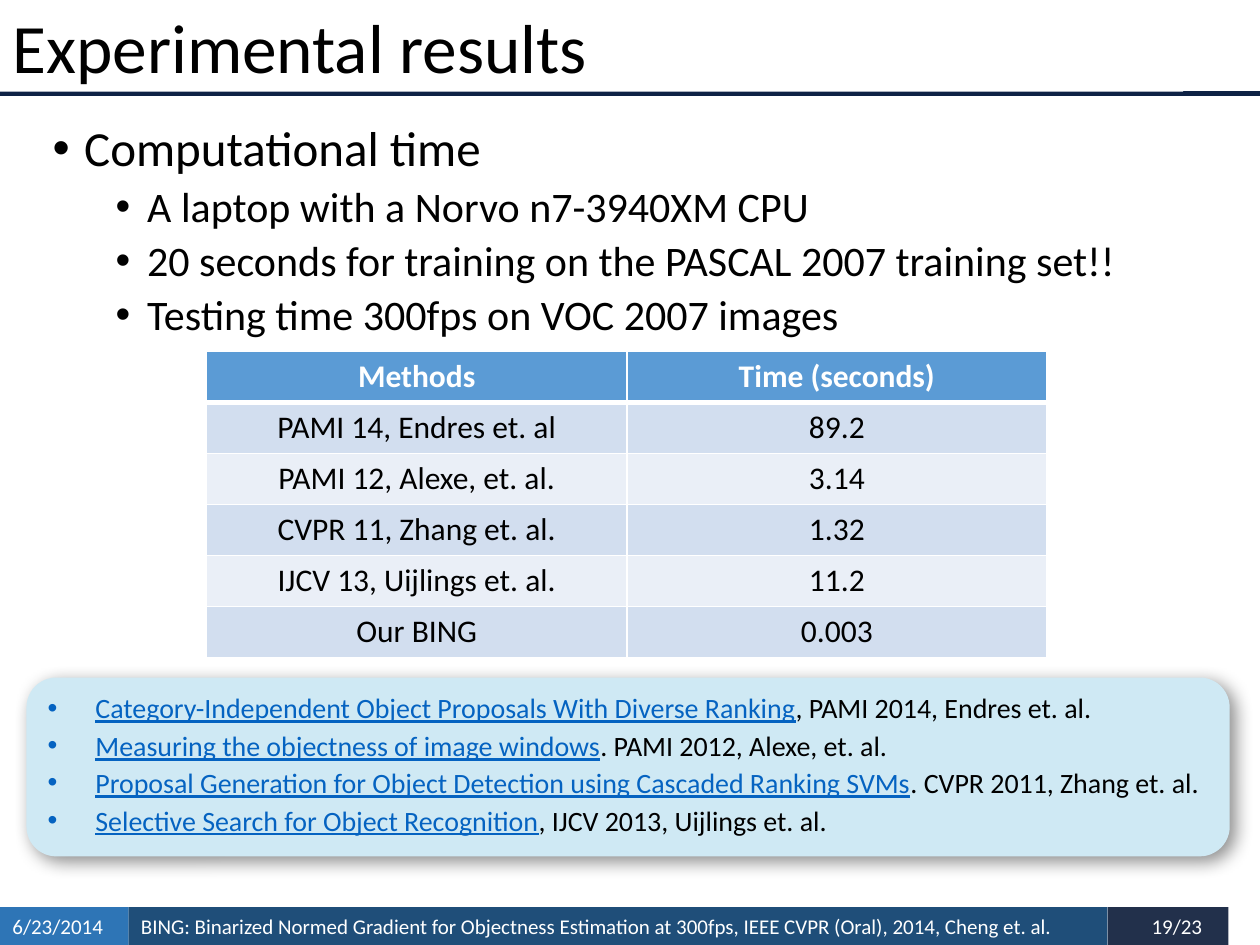
"""Build the slide of experimental results with its timing table and references."""
from dataclasses import dataclass
from typing import NamedTuple

from lxml import etree
from pptx import Presentation
from pptx import util as u
from pptx.dml import color
from pptx.enum import shapes, text
from pptx.oxml import ns

WIDTH, HEIGHT = u.Inches(10), u.Inches(7.5)
LEFT, CENTER, RIGHT = text.PP_ALIGN.LEFT, text.PP_ALIGN.CENTER, text.PP_ALIGN.RIGHT


@dataclass(frozen=True)
class Theme:
    font: str = "Calibri"
    ink: str = "000000"
    paper: str = "FFFFFF"
    rule: str = "0E2245"
    date: str = "2E75B6"
    paper_bar: str = "1F4E79"
    page: str = "22304B"
    panel: str = "CFE9F4"
    link: str = "0563C1"
    head: str = "5B9BD5"
    bands: tuple = ("D2DEEF", "EAEFF7")
    title: float = 39.6
    topic: float = 28
    point: float = 24
    cell: float = 18
    ref: float = 16
    foot: float = 12


class Box(NamedTuple):
    """Left, top, width and height in percent of the slide."""
    x: float
    y: float
    w: float
    h: float

    def place(self) -> tuple:
        return tuple(int(part * size / 100) for part, size in zip(self, (WIDTH, HEIGHT) * 2))


class Foot(NamedTuple):
    words: str
    box: Box
    fill: str | None
    align: int


class Point(NamedTuple):
    words: str
    size: float
    indent: float
    before: float


class Ref(NamedTuple):
    title: str
    venue: str


T = Theme()
FEET = [
    Foot("", Box(87.9, 96, 9.6, 4), T.page, LEFT),
    Foot("BING: Binarized Normed Gradient for Objectness Estimation at 300fps, "
         "IEEE CVPR (Oral), 2014, Cheng et. al.", Box(10.2, 96, 77.7, 4), T.paper_bar, LEFT),
    Foot("6/23/2014", Box(0, 96, 10.2, 4), T.date, LEFT),
    Foot("19/23", Box(89, 96, 7.4, 4), None, RIGHT),
]
POINTS = [
    Point("Computational time", T.topic, 0.25, 0),
    Point("A laptop with a Norvo n7-3940XM CPU", T.point, 0.75, 5),
    Point("20 seconds for training on the PASCAL 2007 training set!!", T.point, 0.75, 5),
    Point("Testing time 300fps on VOC 2007 images", T.point, 0.75, 5),
]
REFS = [
    Ref("Category-Independent Object Proposals With Diverse Ranking", ", PAMI 2014, Endres et. al."),
    Ref("Measuring the objectness of image windows", ". PAMI 2012, Alexe, et. al."),
    Ref("Proposal Generation for Object Detection using Cascaded Ranking SVMs",
        ". CVPR 2011, Zhang et. al."),
    Ref("Selective Search for Object Recognition", ", IJCV 2013, Uijlings et. al."),
]
ROWS = [
    ("Methods", "Time (seconds)"),
    ("PAMI 14, Endres et. al", "89.2"),
    ("PAMI 12, Alexe, et. al.", "3.14"),
    ("CVPR 11, Zhang et. al.", "1.32"),
    ("IJCV 13, Uijlings et. al.", "11.2"),
    ("Our BING", "0.003"),
]


def rgb(code: str) -> color.RGBColor:
    return color.RGBColor.from_string(code)


def add(parent, tag: str, **attrs):
    return etree.SubElement(parent, ns.qn(tag), {key: str(val) for key, val in attrs.items()})


def style(run, size: float, ink: str, bold: bool = False, under: bool = False) -> None:
    font = run.font
    font.name, font.size, font.bold, font.underline = T.font, u.Pt(size), bold, under
    font.color.rgb = rgb(ink)


def bullet(para, left: float, hang: float) -> None:
    props = para._p.get_or_add_pPr()
    props.set("marL", str(u.Inches(left)))
    props.set("indent", str(-u.Inches(hang)))
    add(props, "a:buFont", typeface="Arial")
    add(props, "a:buChar", char="•")


def panel(slide, box: Box, fill: str | None, kind=shapes.MSO_SHAPE.RECTANGLE):
    shape = slide.shapes.add_shape(kind, *box.place())
    shape.shadow.inherit = False
    shape.line.fill.background()
    if fill:
        shape.fill.solid()
        shape.fill.fore_color.rgb = rgb(fill)
    else:
        shape.fill.background()
    shape.text_frame.word_wrap = True
    shape.text_frame.vertical_anchor = text.MSO_ANCHOR.MIDDLE
    return shape


def label(slide, words: str, box: Box, fill: str | None, size: float, ink: str, align=LEFT) -> None:
    frame = panel(slide, box, fill).text_frame
    if words:
        frame.text = words
        frame.paragraphs[0].alignment = align
        style(frame.paragraphs[0].runs[0], size, ink)


def ruler(slide, level: float) -> None:
    start = Box(0, level, 100, 0).place()
    line = slide.shapes.add_connector(shapes.MSO_CONNECTOR.STRAIGHT, *start[:2], WIDTH, start[1])
    line.line.color.rgb, line.line.width = rgb(T.rule), u.Pt(3)
    add(line._element.spPr, "a:effectLst")


def outline(slide, points: list[Point], box: Box) -> None:
    frame = slide.shapes.add_textbox(*box.place()).text_frame
    frame.word_wrap = True
    frame.text = "\n".join(point.words for point in points)
    for para, point in zip(frame.paragraphs, points):
        bullet(para, point.indent, 0.25)
        para.line_spacing, para.space_before = 0.9, u.Pt(point.before)
        style(para.runs[0], point.size, T.ink)


def sources(slide, refs: list[Ref], box: Box) -> None:
    shape = panel(slide, box, T.panel, shapes.MSO_SHAPE.ROUNDED_RECTANGLE)
    glow = add(shape._element.spPr.find(ns.qn("a:effectLst")), "a:outerShdw", blurRad=u.Pt(10),
               dist=u.Pt(4), dir=45 * 60000, algn="tl", rotWithShape=0)
    add(add(glow, "a:srgbClr", val=T.ink), "a:alpha", val=43000)
    frame = shape.text_frame
    frame.text = "\n".join(ref.title for ref in refs)
    for row, (para, ref) in enumerate(zip(frame.paragraphs, refs)):
        bullet(para, 0.38, 0.38)
        para.alignment, para.line_spacing = text.PP_ALIGN.JUSTIFY, 0.8
        para.space_before, para.space_after = u.Pt(3 if row else 0), u.Pt(3)
        style(para.runs[0], T.ref, T.link, under=True)
        tail = para.add_run()
        tail.text = ref.venue
        style(tail, T.ref, T.ink)


def border(cell, row: int) -> None:
    heavy = {0: "B", 1: "T"}.get(row)
    for side in "LRTB":
        width = u.Pt(3 if side == heavy else 1)
        line = add(cell._tc.get_or_add_tcPr(), f"a:ln{side}", w=width)
        add(add(line, "a:solidFill"), "a:srgbClr", val=T.paper)


def timing(slide, rows: list[tuple], box: Box) -> None:
    table = slide.shapes.add_table(len(rows), len(rows[0]), *box.place()).table
    for row, words in enumerate(rows):
        for col, word in enumerate(words):
            cell = table.cell(row, col)
            border(cell, row)
            cell.fill.solid()
            cell.fill.fore_color.rgb = rgb(T.bands[(row - 1) % 2] if row else T.head)
            cell.text_frame.text = word
            para = cell.text_frame.paragraphs[0]
            para.alignment = CENTER
            style(para.runs[0], T.cell, T.ink if row else T.paper, bold=not row)


def main() -> None:
    deck = Presentation()
    deck.slide_width, deck.slide_height = WIDTH, HEIGHT
    slide = deck.slides.add_slide(deck.slide_layouts[6])
    for foot in FEET:
        label(slide, foot.words, foot.box, foot.fill, T.foot, T.paper, foot.align)
    ruler(slide, 9.9)
    label(slide, "Experimental results", Box(0, 0, 93.9, 9.7), T.paper, T.title, T.ink)
    outline(slide, POINTS, Box(3.2, 12.5, 93.1, 73.2))
    sources(slide, REFS, Box(2.1, 71.7, 95.5, 18.93))
    timing(slide, ROWS, Box(16.4, 37.2, 66.7, 32.4))
    deck.save("out.pptx")


if __name__ == "__main__":
    main()
